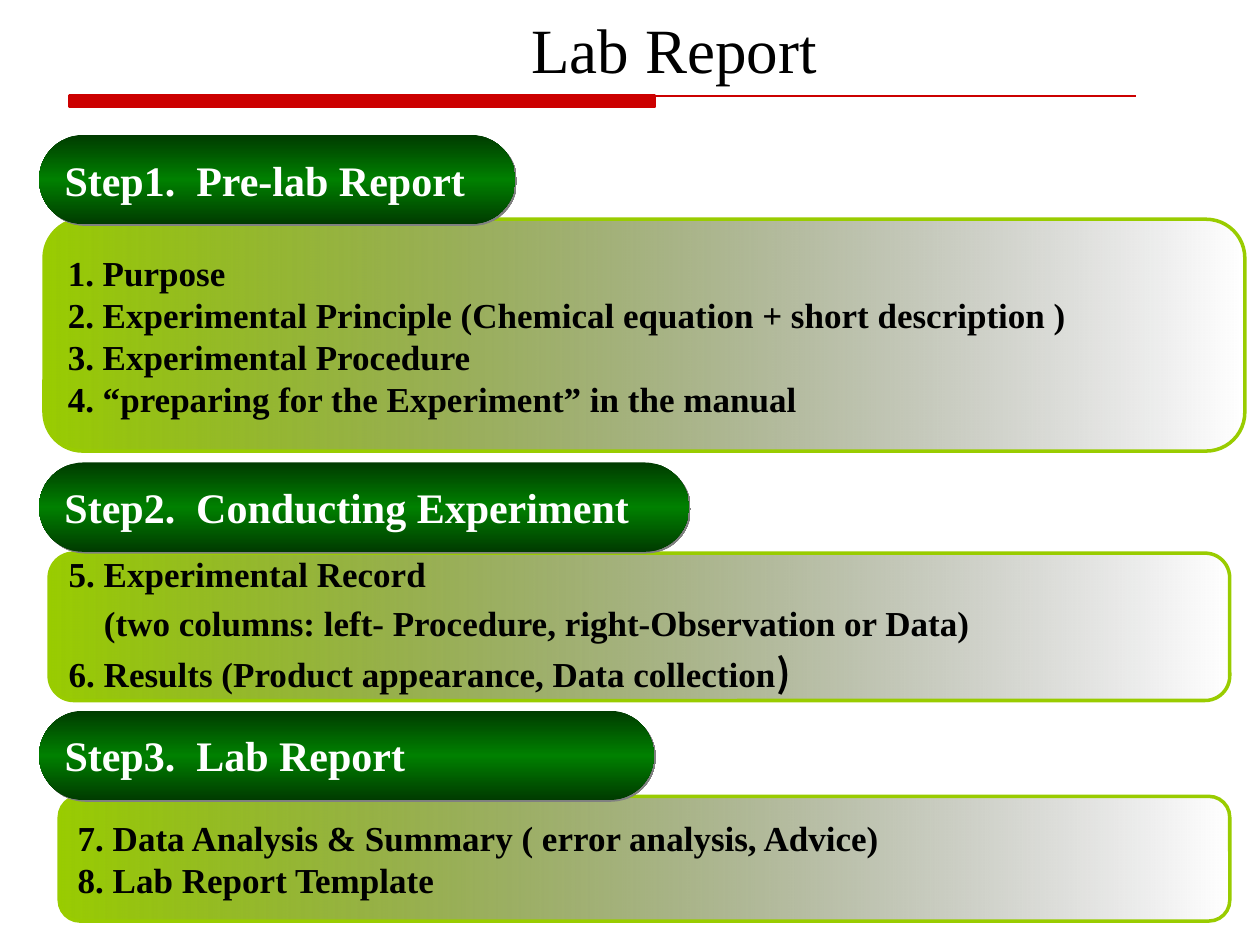
from lxml import etree
from pptx import Presentation, util as u
from pptx.dml.color import RGBColor
from pptx.enum import shapes, text
from pptx.oxml import parse_xml
from pptx.oxml.ns import nsdecls, qn

SERIF = "Times New Roman"
LIME, RED = "99CC00", "CC0000"
BAND_STOPS = [(0, LIME, 100), (100, "000000", 0)]
PILL_STOPS = [(0, "003B00", 100), (50, "008000", 100), (100, "003B00", 100)]
PILL_LEFT, PILL_HEIGHT = 0.31, 0.71

STEPS = [
    {"heading": "Step1.  Pre-lab Report", "pill": (1.07, 3.78),
     "band": (0.35, 1.74, 9.53, 1.84), "spaced": False,
     "items": [["1. Purpose"],
               ["2. Experimental Principle (Chemical equation + short description )"],
               ["3. Experimental Procedure"],
               ["4. “preparing for the Experiment” in the manual"]]},
    {"heading": "Step2.  Conducting Experiment", "pill": (3.67, 5.16),
     "band": (0.39, 4.39, 9.37, 1.17), "spaced": True,
     "items": [["5. Experimental Record"],
               ["(two columns: left- Procedure, right-Observation or Data)"],
               ["6. Results (Product appearance, Data collection", ")"]]},
    {"heading": "Step3.  Lab Report", "pill": (5.64, 4.88),
     "band": (0.47, 6.32, 9.29, 0.99), "spaced": False,
     "items": [["7. Data Analysis & Summary ( error analysis, Advice)"],
               ["8. Lab Report Template"]]},
]


def rgb(code):
    """Turn a hex string into a colour."""
    return RGBColor.from_string(code)


def inches(*lengths):
    """Turn numbers into inch lengths."""
    return [u.Inches(length) for length in lengths]


def add_run(paragraph, words, size, color, bold=True, font=SERIF):
    """Append one formatted run to a paragraph."""
    run = paragraph.add_run()
    run.text = words
    run.font.name, run.font.size, run.font.bold = font, u.Pt(size), bold
    run.font.color.rgb = rgb(color)


def set_gradient(shape, stops, angle):
    """Fill a shape with a linear gradient of position, colour and opacity."""
    marks = "".join(
        f'<a:gs pos="{pos * 1000}"><a:srgbClr val="{color}">'
        f'<a:alpha val="{opacity * 1000}"/></a:srgbClr></a:gs>'
        for pos, color, opacity in stops)
    gradient = parse_xml(
        f'<a:gradFill {nsdecls("a")} rotWithShape="1"><a:gsLst>{marks}</a:gsLst>'
        f'<a:lin ang="{angle * 60000}" scaled="1"/></a:gradFill>')
    shape.fill.background()
    properties = shape._element.spPr
    properties.replace(properties.find(qn("a:noFill")), gradient)


def add_rounded(slide, box, corner, stops, angle):
    """Add a rounded gradient box without shadow."""
    rounded = slide.shapes.add_shape(shapes.MSO_SHAPE.ROUNDED_RECTANGLE, *inches(*box))
    rounded.adjustments[0] = corner
    rounded.shadow.inherit = False
    set_gradient(rounded, stops, angle)
    return rounded


def add_band(slide, box, items, spaced):
    """Add the lime band that lists the parts of a step."""
    band = add_rounded(slide, box, 0.167, BAND_STOPS, 0)
    band.line.color.rgb, band.line.width = rgb(LIME), u.Pt(2)
    frame = band.text_frame
    frame.word_wrap = False
    frame.vertical_anchor = text.MSO_ANCHOR.MIDDLE
    for index, (words, *closing) in enumerate(items):
        item = frame.add_paragraph() if index else frame.paragraphs[0]
        item.alignment = text.PP_ALIGN.LEFT
        if spaced:
            item.line_spacing, item.space_after = 0.9, u.Pt(6)
        if words.startswith("("):
            item._p.get_or_add_pPr().set("marL", str(u.Inches(0.28)))
        add_run(item, words, 20, "000000")
        for mark in closing:
            add_run(item, mark, 22, "000000", font="Noto Sans CJK SC")


def add_pill(slide, top, width, heading):
    """Add the green heading pill of a step with its hard shadow."""
    pill = add_rounded(slide, (PILL_LEFT, top, width, PILL_HEIGHT), 0.5, PILL_STOPS, 90)
    pill.line.fill.background()
    pill._element.spPr.find(qn("a:effectLst")).append(parse_xml(
        f'<a:outerShdw {nsdecls("a")} dist="{u.Pt(1.4)}" dir="2700000" algn="ctr" '
        'rotWithShape="0"><a:srgbClr val="808080"/></a:outerShdw>'))
    frame = pill.text_frame
    frame.word_wrap = True
    frame.auto_size = text.MSO_AUTO_SIZE.SHAPE_TO_FIT_TEXT
    frame.vertical_anchor = text.MSO_ANCHOR.TOP
    frame.paragraphs[0].alignment = text.PP_ALIGN.LEFT
    add_run(frame.paragraphs[0], heading, 24, "FFFFFF")


def add_title(slide, words):
    """Place and format the slide title."""
    title = slide.shapes.title
    title.left, title.top, title.width, title.height = inches(1.69, 0.05, 7.32, 0.73)
    title.text_frame.vertical_anchor = text.MSO_ANCHOR.MIDDLE
    heading = title.text_frame.paragraphs[0]
    heading.alignment, heading.line_spacing = text.PP_ALIGN.CENTER, 0.95
    add_run(heading, words, 36, "000000", bold=False)


def add_title_rule(slide, left, top, right):
    """Draw the thin red rule with its thick left part."""
    rule = slide.shapes.add_connector(
        shapes.MSO_CONNECTOR.STRAIGHT, *inches(left, top, right, top))
    rule.line.color.rgb, rule.line.width = rgb(RED), u.Pt(1.25)
    etree.SubElement(rule._element.spPr, qn("a:effectLst"))
    bar = slide.shapes.add_shape(
        shapes.MSO_SHAPE.RECTANGLE, *inches(left, top, 4.65, 0.09))
    bar.shadow.inherit = False
    bar.fill.solid()
    bar.fill.fore_color.rgb = bar.line.color.rgb = rgb(RED)
    bar.line.width = u.Pt(1.5)


def main():
    """Build the lab report slide."""
    deck = Presentation()
    deck.slide_width, deck.slide_height = inches(10, 7.5)
    slide = deck.slides.add_slide(deck.slide_layouts.get_by_name("Title Only"))
    add_title_rule(slide, 0.55, 0.76, 9.02)
    add_title(slide, "Lab Report")
    for step in STEPS:
        add_band(slide, step["band"], step["items"], step["spaced"])
        add_pill(slide, *step["pill"], step["heading"])
    deck.save("out.pptx")


if __name__ == "__main__":
    main()
